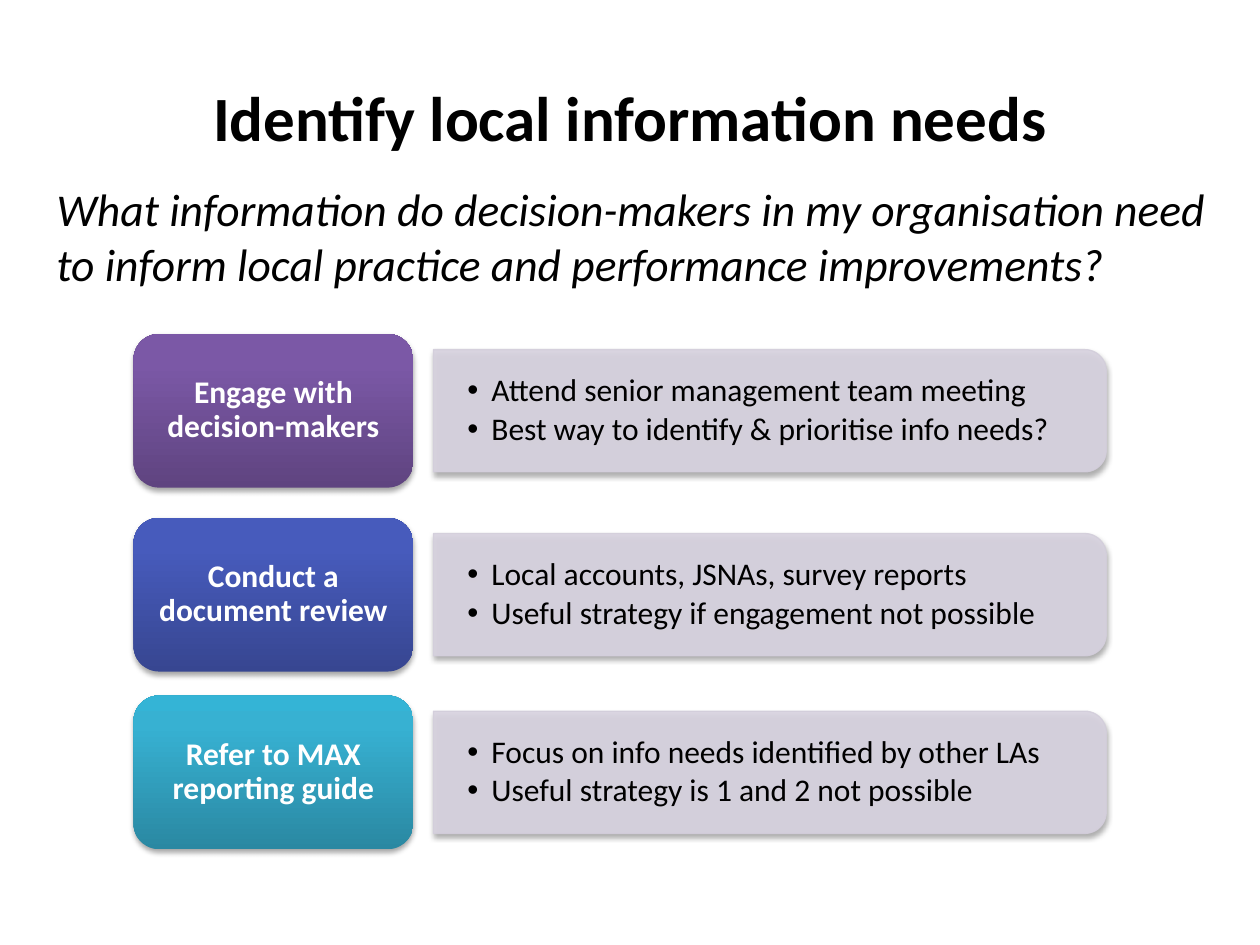
from copy import deepcopy
from math import cos, pi, sin

from pptx import Presentation
from pptx.dml.color import RGBColor
from pptx.enum.shapes import MSO_SHAPE
from pptx.enum.text import MSO_ANCHOR, PP_ALIGN
from pptx.oxml.ns import qn
from pptx.util import Inches, Pt
from lxml.etree import SubElement

BLACK, WHITE = "000000", "FFFFFF"
LABEL_LEFT, LABEL_WIDTH, LABEL_HEIGHT = 1.06, 2.22, 1.22
PANEL_LEFT, PANEL_WIDTH, PANEL_HEIGHT = 3.44, 5.34, 0.97

# top of the row, label, gradient from bottom to top, bullets
STRATEGIES = [
    (2.65, "Engage with decision-makers", ["5F4480", "7B58A6", "7C57A8"],
     ["Attend senior management team meeting",
      "Best way to identify & prioritise info needs?"]),
    (4.11, "Conduct a document review", ["374691", "475BBC", "455ABF"],
     ["Local accounts, JSNAs, survey reports",
      "Useful strategy if engagement not possible"]),
    (5.52, "Refer to MAX reporting guide", ["2A88A2", "37B1D2", "34B4D6"],
     ["Focus on info needs identified by other LAs",
      "Useful strategy is 1 and 2 not possible"]),
]


def rgb(value):
    return RGBColor.from_string(value)


def format_para(para, size, color=BLACK, bold=False, italic=False,
                align=PP_ALIGN.LEFT):
    para.alignment = align
    for span in para.runs:
        font = span.font
        font.name, font.size = "Calibri", Pt(size)
        font.bold, font.italic = bold, italic
        font.color.rgb = rgb(color)


def set_frame(frame, left, top, right, bottom, anchor=MSO_ANCHOR.MIDDLE):
    frame.word_wrap = True
    frame.vertical_anchor = anchor
    frame.margin_left, frame.margin_right = Inches(left), Inches(right)
    frame.margin_top, frame.margin_bottom = Inches(top), Inches(bottom)


def set_alpha(fill_element, percent):
    color = fill_element.find(".//" + qn("a:srgbClr"))
    SubElement(color, qn("a:alpha"), val=str(percent * 1000))


def add_soft_shadow(shape):
    shape.shadow.inherit = False
    effects = shape._element.spPr.find(qn("a:effectLst"))
    shadow = SubElement(effects, qn("a:outerShdw"), blurRad=str(Pt(3.1)),
                        dist=str(Pt(1.8)), dir="5400000", rotWithShape="0")
    SubElement(shadow, qn("a:srgbClr"), val=BLACK)
    set_alpha(shadow, 35)


def fill_gradient(shape, colors):
    """Fill upwards with three colours."""
    shape.fill.gradient()
    shape.fill.gradient_angle = 90
    stops = shape._element.spPr.find(".//" + qn("a:gsLst"))
    stops.append(deepcopy(stops[-1]))
    for stop, position, color in zip(shape.fill.gradient_stops, (0, 0.8, 1), colors):
        stop.position = position
        stop.color.rgb = rgb(color)


def add_title(page, left, top, width, height):
    title = page.shapes.title
    title.left, title.top = Inches(left), Inches(top)
    title.width, title.height = Inches(width), Inches(height)
    title.text_frame.text = "Identify local information needs"
    title.text_frame.vertical_anchor = MSO_ANCHOR.MIDDLE
    format_para(title.text_frame.paragraphs[0], 36, bold=True, align=PP_ALIGN.CENTER)


def add_question(page, left, top, width, height):
    box = page.shapes.add_textbox(Inches(left), Inches(top), Inches(width), Inches(height))
    set_frame(box.text_frame, 0.1, 0.05, 0.1, 0.05, MSO_ANCHOR.TOP)
    box.text_frame.text = ("What information do decision-makers in my organisation need "
                           "to inform local practice and performance improvements?")
    format_para(box.text_frame.paragraphs[0], 26, italic=True)


def add_label(page, left, top, width, height, text, colors):
    label = page.shapes.add_shape(MSO_SHAPE.ROUNDED_RECTANGLE, Inches(left), Inches(top),
                                  Inches(width), Inches(height))
    fill_gradient(label, colors)
    label.line.fill.background()
    add_soft_shadow(label)
    set_frame(label.text_frame, 0.07, 0.03, 0.07, 0.03)
    label.text_frame.text = text
    para = label.text_frame.paragraphs[0]
    format_para(para, 18, WHITE, bold=True, align=PP_ALIGN.CENTER)
    para.line_spacing, para.space_after = 0.9, Pt(6.3)


def right_rounded_outline(left, top, width, height, radius, steps=12):
    """Points of a rectangle whose two right corners are rounded."""
    right, bottom = left + width, top + height
    points = [(left, top)]
    for center_y, start in ((top + radius, -pi / 2), (bottom - radius, 0)):
        for step in range(steps + 1):
            angle = start + step * pi / 2 / steps
            points.append((right - radius + radius * cos(angle),
                           center_y + radius * sin(angle)))
    return points + [(left, bottom)]


def add_bullet(para):
    para.line_spacing, para.space_after = 0.9, Pt(2.7)
    properties = para._p.get_or_add_pPr()
    properties.set("marL", str(Inches(0.19)))
    properties.set("indent", str(Inches(-0.19)))
    SubElement(properties, qn("a:buFont"), typeface="Arial")
    SubElement(properties, qn("a:buChar"), char="•")


def add_panel(page, left, top, width, height, bullets):
    points = [(Inches(x), Inches(y))
              for x, y in right_rounded_outline(left, top, width, height, 0.17)]
    builder = page.shapes.build_freeform(*points[0])
    builder.add_line_segments(points[1:], close=True)
    panel = builder.convert_to_shape()
    panel.fill.solid()
    panel.fill.fore_color.rgb = rgb("D8D3E0")
    panel.line.color.rgb = rgb("D3CEDB")
    panel.line.width = Pt(0.75)
    properties = panel._element.spPr
    set_alpha(properties.find(qn("a:solidFill")), 90)
    set_alpha(properties.find(qn("a:ln")), 90)
    add_soft_shadow(panel)
    set_frame(panel.text_frame, 0.27, 0.18, 0.32, 0.18)
    panel.text_frame.text = "\n".join(bullets)
    for para in panel.text_frame.paragraphs:
        format_para(para, 18)
        add_bullet(para)


def main():
    deck = Presentation()
    deck.slide_width, deck.slide_height = Inches(10), Inches(7.5)
    page = deck.slides.add_slide(deck.slide_layouts[5])
    add_title(page, 0.5, 0.3, 9, 1.25)
    add_question(page, 0.35, 1.39, 9.38, 5.59)
    for top, text, colors, bullets in STRATEGIES:
        panel_top = top + (LABEL_HEIGHT - PANEL_HEIGHT) / 2
        add_panel(page, PANEL_LEFT, panel_top, PANEL_WIDTH, PANEL_HEIGHT, bullets)
        add_label(page, LABEL_LEFT, top, LABEL_WIDTH, LABEL_HEIGHT, text, colors)
    deck.save("out.pptx")


if __name__ == "__main__":
    main()
